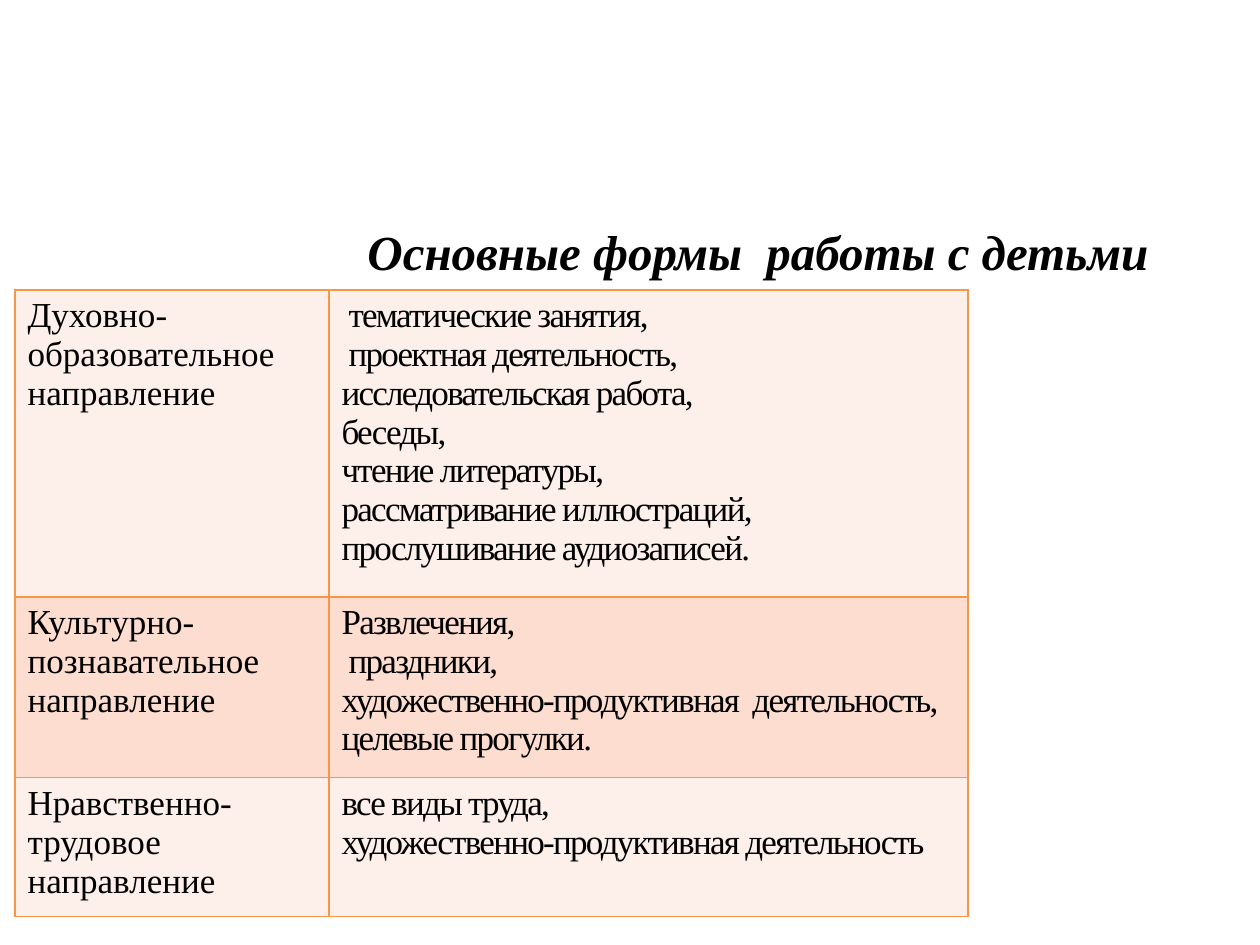
from lxml import etree
from pptx import Presentation, util as u
from pptx.dml.color import RGBColor
from pptx.enum import text
from pptx.oxml import ns

FONT = "Times New Roman"
BORDER = "F79646"
FILLS = ["FDEFE9", "FCDDCF"]
COLUMNS = [314, 639]
ROWS = [
    (306, "Духовно-образовательное направление",
     [" тематические занятия,", " проектная деятельность,", "исследовательская работа,",
      "беседы,", "чтение литературы,", "рассматривание иллюстраций,",
      "прослушивание аудиозаписей."]),
    (181, "Культурно-познавательное направление",
     ["Развлечения,", " праздники,", "художественно-продуктивная  деятельность,",
      "целевые прогулки."]),
    (139, "Нравственно-трудовое направление",
     ["все виды труда,", "художественно-продуктивная деятельность"]),
]


def px(length):
    """Turn pixels into EMU."""
    return u.Emu(round(length * 914400 / 126))


def color(value):
    """Turn a hex string into a colour."""
    return RGBColor.from_string(value)


def write(frame, lines, size=20, bold=False, italic=False, align=None, spacing=0):
    """Write one paragraph per line with a shared format."""
    for index, line in enumerate(lines):
        para = frame.paragraphs[0] if index == 0 else frame.add_paragraph()
        para.alignment = align
        span = para.add_run()
        span.text = line
        font = span.font
        font.name, font.size = FONT, u.Pt(size)
        font.bold, font.italic = bold, italic
        font.color.rgb = color("000000")
        if spacing:
            span._r.get_or_add_rPr().set("spc", str(spacing * 100))


def style_cell(cell, fill):
    """Fill a cell and draw its four borders."""
    properties = cell._tc.get_or_add_tcPr()
    for side in ("a:lnL", "a:lnR", "a:lnT", "a:lnB"):
        line = etree.SubElement(properties, ns.qn(side), w=str(u.Pt(1)))
        solid = etree.SubElement(line, ns.qn("a:solidFill"))
        etree.SubElement(solid, ns.qn("a:srgbClr"), val=BORDER)
    cell.fill.solid()
    cell.fill.fore_color.rgb = color(fill)


def add_title(page, left, top, width, height):
    """Place the slide title."""
    box = page.shapes.add_textbox(px(left), px(top), px(width), px(height))
    box.text_frame.word_wrap = False
    box.text_frame.auto_size = text.MSO_AUTO_SIZE.SHAPE_TO_FIT_TEXT
    write(box.text_frame, ["Основные формы  работы с детьми"], size=28,
          bold=True, italic=True, align=text.PP_ALIGN.CENTER)


def add_directions(page, left, top):
    """Place the table of directions and forms of work."""
    height = sum(row[0] for row in ROWS)
    table = page.shapes.add_table(len(ROWS), len(COLUMNS), px(left), px(top),
                                  px(sum(COLUMNS)), px(height)).table
    table.first_row = False
    table.horz_banding = False
    for column, width in zip(table.columns, COLUMNS):
        column.width = px(width)
    for index, (row_height, direction, forms) in enumerate(ROWS):
        table.rows[index].height = px(row_height)
        for column, (lines, spacing) in enumerate([([direction], 0), (forms, -1)]):
            cell = table.cell(index, column)
            style_cell(cell, FILLS[index % 2])
            write(cell.text_frame, lines, spacing=spacing)


def main():
    """Build and save the deck."""
    deck = Presentation()
    deck.slide_width, deck.slide_height = px(1260), px(945)
    page = deck.slides.add_slide(deck.slide_layouts[6])
    add_title(page, 343, 215, 830, 72)
    add_directions(page, 15, 290)
    deck.save("out.pptx")


if __name__ == "__main__":
    main()
